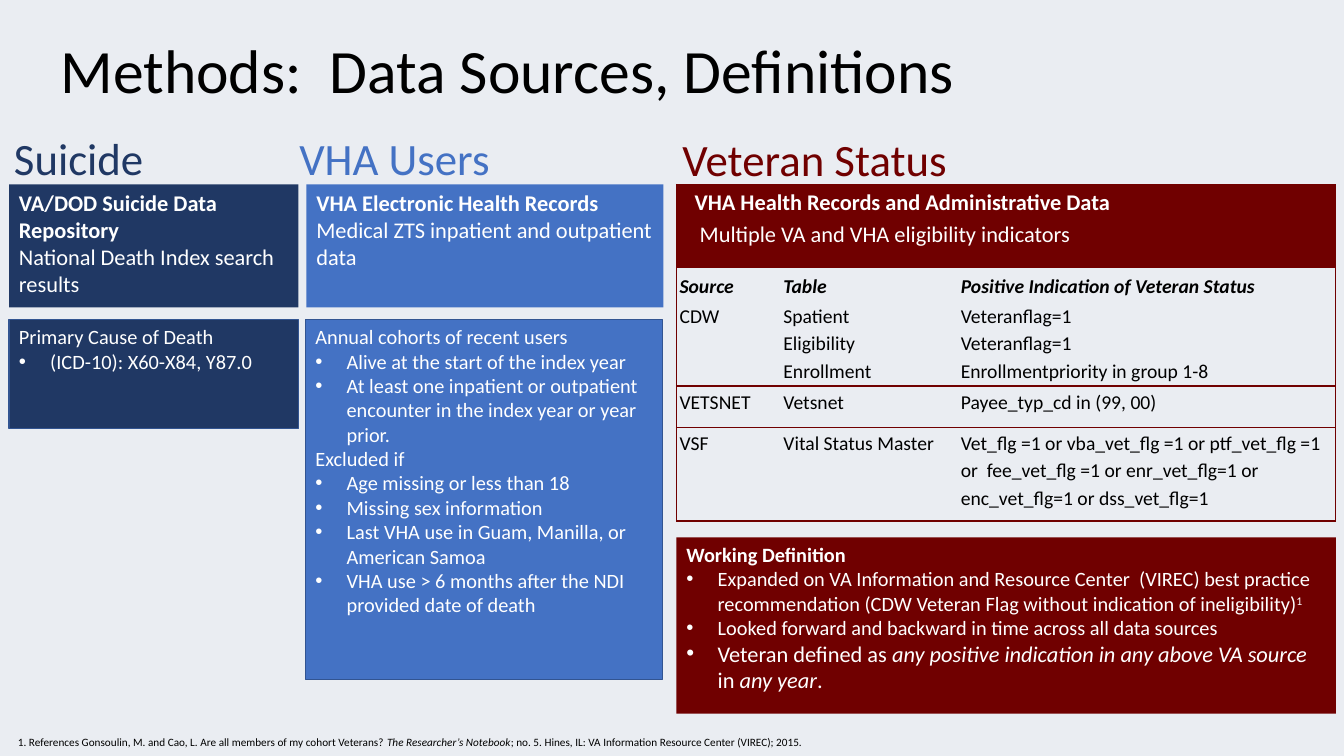
"""Build the data sources and definitions slide."""
import pptx
import pptx.util
import pptx.dml.color
import pptx.enum.shapes
import pptx.enum.text
import pptx.oxml
import pptx.oxml.ns

Inches = pptx.util.Inches
Pt = pptx.util.Pt
RGBColor = pptx.dml.color.RGBColor
Anchor = pptx.enum.text.MSO_ANCHOR

BACKDROP = RGBColor(0xEA, 0xED, 0xF2)
NAVY = RGBColor(0x20, 0x38, 0x64)
BLUE = RGBColor(0x44, 0x72, 0xC4)
EDGE = RGBColor(0x32, 0x54, 0x91)
MAROON = RGBColor(0x70, 0x00, 0x00)
WHITE = RGBColor(0xFF, 0xFF, 0xFF)
BLACK = RGBColor(0x00, 0x00, 0x00)

INDICATORS = [
    ("Source", "Table", "Positive Indication of Veteran Status"),
    ("CDW", "Spatient\nEligibility\nEnrollment",
     "Veteranflag=1\nVeteranflag=1\nEnrollmentpriority in group 1-8"),
    ("VETSNET", "Vetsnet", "Payee_typ_cd in (99, 00)"),
    ("VSF", "Vital Status Master",
     "Vet_flg =1 or vba_vet_flg =1 or ptf_vet_flg =1 or  fee_vet_flg =1 "
     "or enr_vet_flg=1 or enc_vet_flg=1 or dss_vet_flg=1"),
]


def add_span(para, text, size=14.5, color=WHITE, bold=False, italic=False, raised=False):
    """Append one formatted run to a paragraph."""
    span = para.add_run()
    span.text = text
    font = span.font
    font.name, font.size, font.bold, font.italic = "Calibri", Pt(size), bold, italic
    font.color.rgb = color
    if raised:
        span._r.get_or_add_rPr().set("baseline", "30000")


def add_para(frame, text, bullet=False, indent=0, spacing=None, **style):
    """Write a paragraph of text, using the frame's first one while it is empty."""
    para = frame.paragraphs[0]
    if para.runs:
        para = frame.add_paragraph()
    para.alignment = pptx.enum.text.PP_ALIGN.LEFT
    if spacing:
        para.line_spacing = spacing
    hanging = 0.31 if bullet else 0
    properties = para._p.get_or_add_pPr()
    properties.set("marL", str(Inches(indent + hanging)))
    properties.set("indent", str(Inches(-hanging)))
    if bullet:
        properties.append(pptx.oxml.parse_xml(
            f'<a:buFont {pptx.oxml.ns.nsdecls("a")} typeface="Arial"/>'))
        properties.append(pptx.oxml.parse_xml(
            f'<a:buChar {pptx.oxml.ns.nsdecls("a")} char="•"/>'))
    add_span(para, text, **style)
    return para


def add_panel(page, left, top, width, height, fill, edge=None):
    """Add a filled rectangle and return its text frame."""
    box = page.shapes.add_shape(
        pptx.enum.shapes.MSO_SHAPE.RECTANGLE,
        Inches(left), Inches(top), Inches(width), Inches(height))
    box.shadow.inherit = False
    box.fill.solid()
    box.fill.fore_color.rgb = fill
    if edge:
        box.line.color.rgb = edge
        box.line.width = Pt(1)
    else:
        box.line.fill.background()
    frame = box.text_frame
    frame.word_wrap = True
    frame.vertical_anchor = Anchor.TOP
    return frame


def add_label(page, left, top, width, height, text, **style):
    """Add a text box and return its paragraph."""
    box = page.shapes.add_textbox(Inches(left), Inches(top), Inches(width), Inches(height))
    box.text_frame.word_wrap = True
    return add_para(box.text_frame, text, **style)


def draw_title(page):
    """Place and format the slide title."""
    title = page.shapes.title
    title.left, title.top = Inches(0.5), Inches(0)
    title.width, title.height = Inches(12.25), Inches(1.45)
    title.text_frame.vertical_anchor = Anchor.MIDDLE
    add_para(title.text_frame, "Methods:  Data Sources, Definitions",
             spacing=0.9, size=44, color=BLACK)


def draw_source(page, left, top, width, fill, source, detail):
    """Draw the panel that names a data source."""
    frame = add_panel(page, left, top, width, 1.22, fill)
    add_para(frame, source, size=16, bold=True)
    add_para(frame, detail, size=16)


def draw_criteria(page, left, top, width, height, fill, sections):
    """Draw a panel of headed bullet lists."""
    frame = add_panel(page, left, top, width, height, fill, EDGE)
    for heading, items in sections:
        add_para(frame, heading)
        for item in items:
            add_para(frame, item, bullet=True)


def format_cell(cell, sides, fill=None):
    """Set a cell's margins, maroon border sides and fill."""
    cell.margin_left = cell.margin_top = cell.margin_right = Inches(0.01)
    cell.margin_bottom = 0
    properties = cell._tc.get_or_add_tcPr()
    for side in "LRTB":
        paint = f'<a:solidFill><a:srgbClr val="{MAROON}"/></a:solidFill>'
        if side not in sides:
            paint = "<a:noFill/>"
        properties.append(pptx.oxml.parse_xml(
            f'<a:ln{side} {pptx.oxml.ns.nsdecls("a")} w="12700">{paint}</a:ln{side}>'))
    if fill:
        cell.fill.solid()
        cell.fill.fore_color.rgb = fill
    else:
        cell.fill.background()


def draw_indicators(page, left, top, width, height):
    """Draw the table of veteran status indicators."""
    table = page.shapes.add_table(
        5, 3, Inches(left), Inches(top), Inches(width), Inches(height)).table
    for column, size in zip(table.columns, (1.03, 1.76, 3.75)):
        column.width = Inches(size)
    for row, size in zip(table.rows, (0.83, 0.32, 0.85, 0.41, 0.93)):
        row.height = Inches(size)
    banner = table.cell(0, 0)
    banner.merge(table.cell(0, 2))
    for row in range(5):
        for column in range(3):
            sides = ("L", "", "R")[column]
            sides += "T" if row in (0, 3, 4) else ""
            sides += "B" if row >= 2 else ""
            format_cell(table.cell(row, column), sides, MAROON if row == 0 else None)
    add_para(banner.text_frame, "VHA Health Records and Administrative Data",
             indent=0.17, spacing=1.15, size=16, bold=True)
    add_para(banner.text_frame, "Multiple VA and VHA eligibility indicators",
             indent=0.22, spacing=1.15, size=16)
    for row, texts in enumerate(INDICATORS, start=1):
        header = row == 1
        for column, text in enumerate(texts):
            cell = table.cell(row, column)
            cell.vertical_anchor = Anchor.MIDDLE if header else Anchor.TOP
            for line in text.split("\n"):
                add_para(cell.text_frame, line, indent=0.02, spacing=1.15,
                         size=14, color=BLACK, bold=header, italic=header)


def draw_definition(page, left, top, width, height):
    """Draw the working definition panel."""
    frame = add_panel(page, left, top, width, height, MAROON)
    add_para(frame, "Working Definition", bold=True)
    para = add_para(
        frame, "Expanded on VA Information and Resource Center  (VIREC) best practice "
        "recommendation (CDW Veteran Flag without indication of ineligibility)", bullet=True)
    add_span(para, "1", raised=True)
    add_para(frame, "Looked forward and backward in time across all data sources", bullet=True)
    para = add_para(frame, "Veteran defined as ", bullet=True, size=16)
    add_span(para, "any positive indication in any above VA source ", size=16, italic=True)
    add_span(para, "in ", size=16)
    add_span(para, "any year", size=16, italic=True)
    add_span(para, ".", size=16)


def draw_reference(page, left, top, width, height):
    """Write the footnote reference."""
    para = add_label(
        page, left, top, width, height, "1. References Gonsoulin, M. and Cao, L. "
        "Are all members of my cohort Veterans? ", size=8, color=BLACK)
    add_span(para, "The Researcher’s Notebook", size=8, color=BLACK, italic=True)
    add_span(para, "; no. 5. Hines, IL: VA Information Resource Center (VIREC); 2015.",
             size=8, color=BLACK)


def main():
    """Build and save the deck."""
    deck = pptx.Presentation()
    deck.slide_width, deck.slide_height = Inches(13.33), Inches(7.5)
    page = deck.slides.add_slide(deck.slide_layouts.get_by_name("Title Only"))
    page.background.fill.solid()
    page.background.fill.fore_color.rgb = BACKDROP
    draw_title(page)
    draw_source(page, 0.09, 1.83, 2.87, NAVY, "VA/DOD Suicide Data Repository",
                "National Death Index search results")
    draw_criteria(page, 0.09, 3.17, 2.87, 1.08, NAVY, [
        ("Primary Cause of Death", ["(ICD-10): X60-X84, Y87.0"])])
    draw_source(page, 3.04, 1.83, 3.54, BLUE, "VHA Electronic Health Records",
                "Medical ZTS inpatient and outpatient data")
    draw_criteria(page, 3.03, 3.17, 3.54, 3.57, BLUE, [
        ("Annual cohorts of recent users", [
            "Alive at the start of the index year",
            "At least one inpatient or outpatient encounter in the index year or year prior."]),
        ("Excluded if", [
            "Age missing or less than 18", "Missing sex information",
            "Last VHA use in Guam, Manilla, or American Samoa",
            "VHA use > 6 months after the NDI provided date of death"])])
    draw_definition(page, 6.71, 5.33, 6.54, 1.75)
    draw_indicators(page, 6.71, 1.83, 6.54, 3.34)
    for left, top, width, text, color in (
            (0.04, 1.25, 2.83, "Suicide", NAVY), (2.87, 1.25, 2.59, "VHA Users", BLUE),
            (6.67, 1.26, 3.42, "Veteran Status", MAROON)):
        add_label(page, left, top, width, 0.64, text, size=32, color=color)
    draw_reference(page, 0.08, 7.25, 9.04, 0.24)
    deck.save("out.pptx")


if __name__ == "__main__":
    main()
